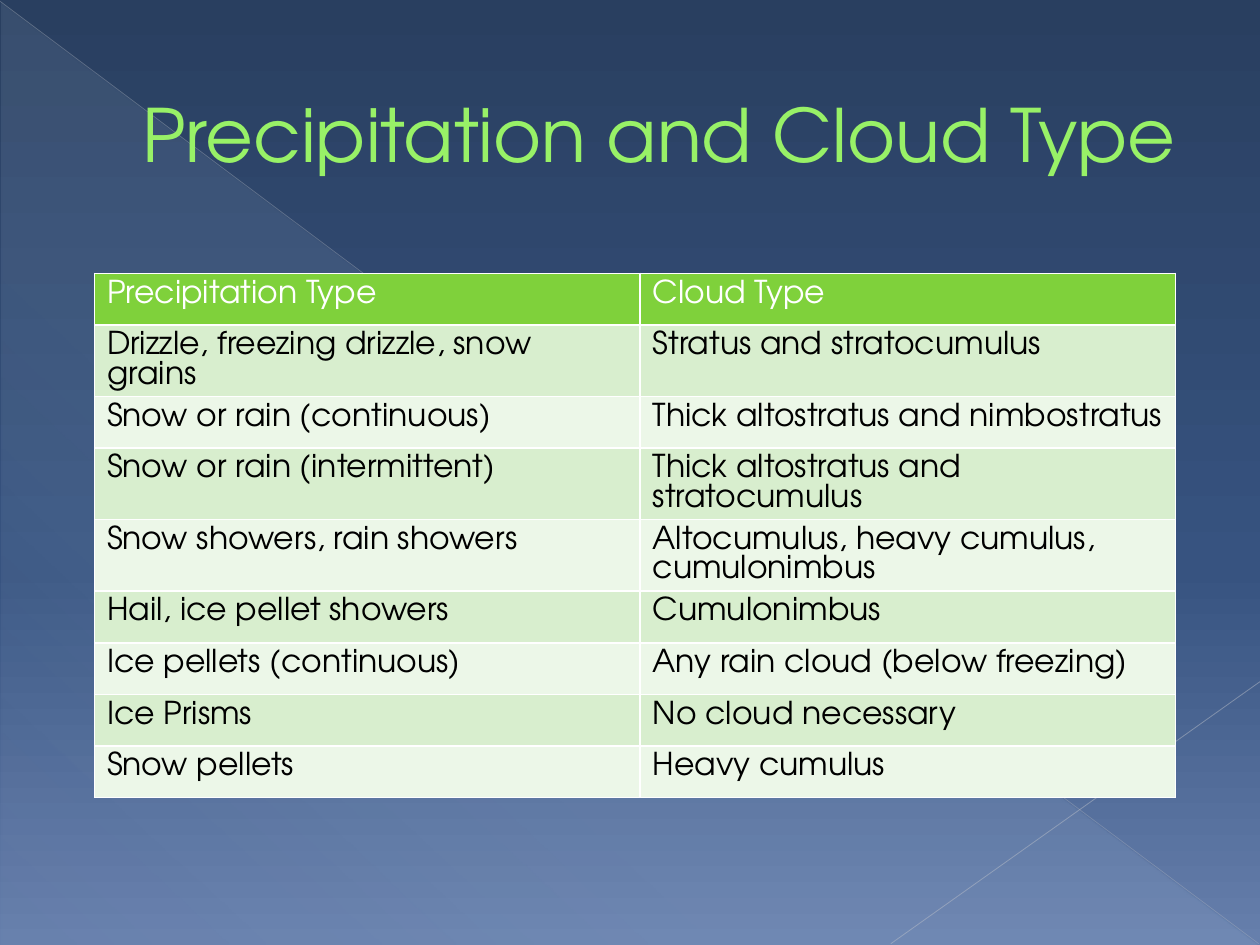
import pptx
import pptx.dml.color
import pptx.enum.shapes
import pptx.enum.text
import pptx.oxml
import pptx.oxml.ns
import pptx.util
from pptx.util import Inches

FONT = "TeX Gyre Adventor"
BAND_FILLS = ("ECF7E8", "D8EECE")
ROWS = [
    ("Precipitation Type", "Cloud Type"),
    ("Drizzle, freezing drizzle, snow grains", "Stratus and stratocumulus"),
    ("Snow or rain (continuous)", "Thick altostratus and nimbostratus"),
    ("Snow or rain (intermittent)", "Thick altostratus and stratocumulus"),
    ("Snow showers, rain showers", "Altocumulus, heavy cumulus, cumulonimbus"),
    ("Hail, ice pellet showers", "Cumulonimbus"),
    ("Ice pellets (continuous)", "Any rain cloud (below freezing)"),
    ("Ice Prisms", "No cloud necessary"),
    ("Snow pellets", "Heavy cumulus"),
]


def color(value):
    return pptx.dml.color.RGBColor.from_string(value)


def element_from(xml):
    """Parse a fragment whose root tag ends with the {ns} marker."""
    return pptx.oxml.parse_xml(xml.replace("{ns}", pptx.oxml.ns.nsdecls("a"), 1))


def set_gradient(fill, owner, stops, angle):
    """Give the owner element a gradient of (position, colour, opacity) stops in percent."""
    fill.solid()
    stop_xml = "".join(
        f'<a:gs pos="{position * 1000}"><a:srgbClr val="{value}">'
        f'<a:alpha val="{opacity * 1000}"/></a:srgbClr></a:gs>'
        for position, value, opacity in stops
    )
    gradient = element_from(
        f'<a:gradFill {{ns}} rotWithShape="1"><a:gsLst>{stop_xml}</a:gsLst>'
        f'<a:lin ang="{angle * 60000}" scaled="0"/></a:gradFill>'
    )
    solid = owner.find(".//" + pptx.oxml.ns.qn("a:solidFill"))
    solid.getparent().replace(solid, gradient)


def format_text(paragraph, **values):
    font = paragraph.font if not paragraph.runs else paragraph.runs[0].font
    font.color.rgb = color(values.pop("color"))
    for name, value in {"name": FONT, "bold": False, **values}.items():
        setattr(font, name, value)


def add_triangle(slide):
    triangle = slide.shapes.add_shape(
        pptx.enum.shapes.MSO_SHAPE.RIGHT_TRIANGLE,
        Inches(0.01), Inches(0.02), Inches(9.98), Inches(7.48),
    )
    triangle.shadow.inherit = False
    triangle.line.fill.background()
    stops = [(0, "D6ECFF", 10), (70, "D6ECFF", 8), (100, "D6ECFF", 1)]
    set_gradient(triangle.fill, triangle.element.spPr, stops, 133)


def add_line(slide, start, end, value, width, opacity):
    line = slide.shapes.add_connector(
        pptx.enum.shapes.MSO_CONNECTOR.STRAIGHT, *map(Inches, start + end)
    )
    line.line.color.rgb = color(value)
    line.line.width = pptx.util.Pt(width)
    line_color = line.element.spPr.find(".//" + pptx.oxml.ns.qn("a:srgbClr"))
    line_color.append(element_from(f'<a:alpha {{ns}} val="{opacity * 1000}"/>'))
    line.element.spPr.append(element_from("<a:effectLst {ns}/>"))


def add_title(slide, text):
    title = slide.shapes.title
    box = {"left": 0.5, "top": 0.29, "width": 9, "height": 1.53}
    for name, value in box.items():
        setattr(title, name, Inches(value))
    frame = title.text_frame
    frame.text = text
    frame.word_wrap = True
    frame.vertical_anchor = pptx.enum.text.MSO_ANCHOR.MIDDLE
    paragraph = frame.paragraphs[0]
    paragraph.alignment = pptx.enum.text.PP_ALIGN.LEFT
    properties = paragraph._p.get_or_add_pPr()
    properties.set("marL", str(Inches(0.53)))
    properties.set("indent", "0")
    format_text(paragraph, color="98F167", size=pptx.util.Pt(42))
    outline = element_from(
        f'<a:ln {{ns}} w="{pptx.util.Pt(0.5)}"><a:solidFill>'
        '<a:srgbClr val="589129"/></a:solidFill></a:ln>'
    )
    paragraph.runs[0]._r.get_or_add_rPr().insert(0, outline)
    slide.shapes.element.append(title.element)  # in front of the decoration


def add_cloud_table(slide):
    row_height = 0.41
    widths = (4.33, 4.25)
    table = slide.shapes.add_table(
        len(ROWS), len(widths), Inches(0.75), Inches(2.17),
        Inches(sum(widths)), Inches(row_height * len(ROWS)),
    ).table
    for column, width in zip(table.columns, widths):
        column.width = Inches(width)
    for row_index, texts in enumerate(ROWS):
        table.rows[row_index].height = Inches(row_height)
        header = row_index == 0
        for column_index, text in enumerate(texts):
            cell = table.cell(row_index, column_index)
            cell.text = text
            cell.fill.solid()
            cell.fill.fore_color.rgb = color("7FD13B" if header else BAND_FILLS[row_index % 2])
            format_text(
                cell.text_frame.paragraphs[0],
                color="FFFFFF" if header else "000000", size=pptx.util.Pt(18),
            )


def main():
    presentation = pptx.Presentation()
    presentation.slide_width = Inches(10)
    presentation.slide_height = Inches(7.5)
    slide = presentation.slides.add_slide(presentation.slide_layouts[5])
    stops = [(0, "293F60", 100), (60, "375380", 100), (100, "667FAC", 100)]
    set_gradient(slide.background.fill, slide.element, stops, 90)
    add_triangle(slide)
    add_line(slide, (0, 0.01), (9.99, 7.49), "B7BCC5", 0.39, 35)
    add_line(slide, (10, 5.41), (7.07, 7.49), "BFC3CB", 0.47, 45)
    add_title(slide, "Precipitation and Cloud Type")
    add_cloud_table(slide)
    presentation.save("out.pptx")


if __name__ == "__main__":
    main()
